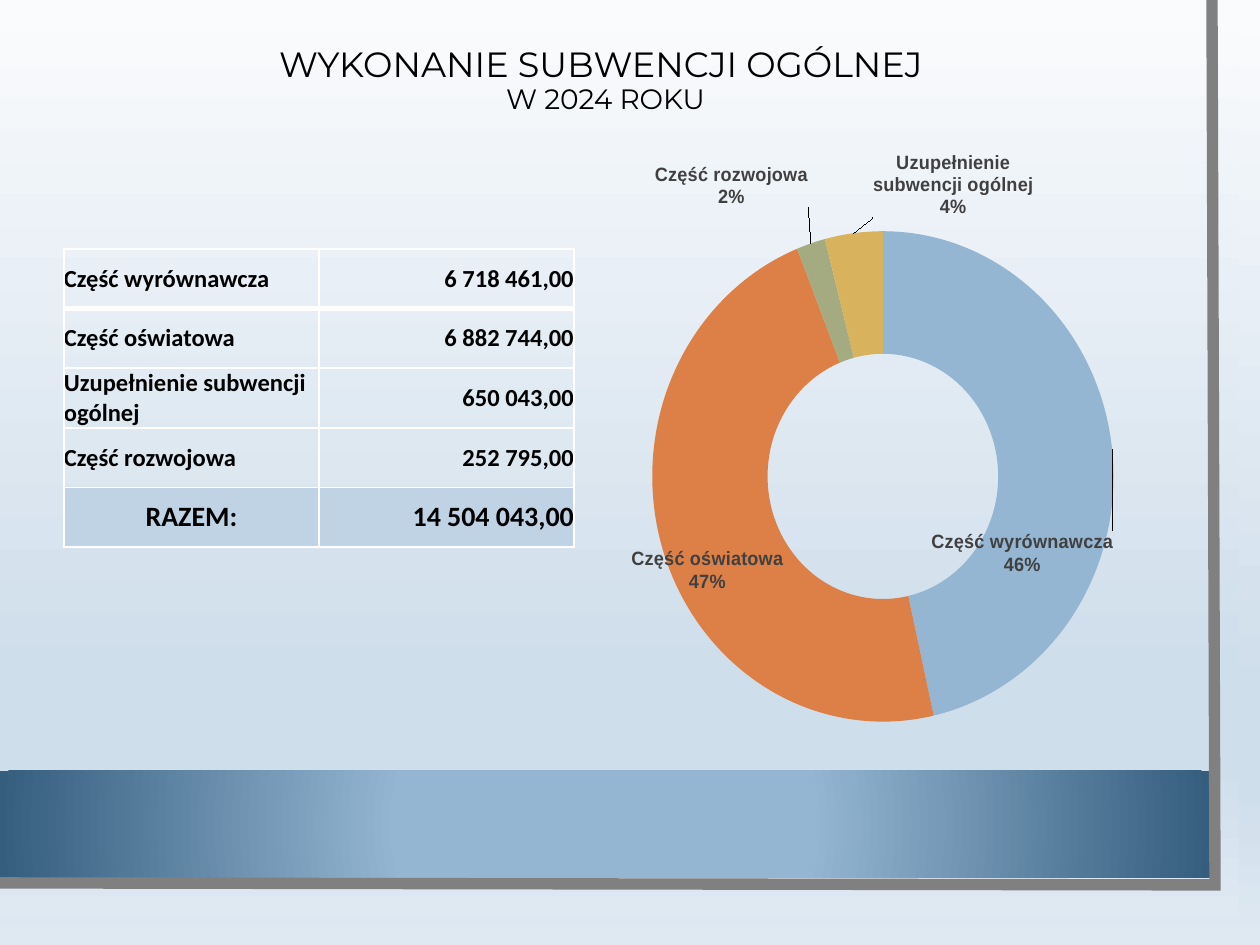
from copy import deepcopy
from dataclasses import dataclass

from lxml import etree
from pptx import Presentation
from pptx.chart.data import CategoryChartData
from pptx.dml.color import RGBColor
from pptx.enum.chart import XL_CHART_TYPE
from pptx.enum.shapes import MSO_SHAPE
from pptx.enum.text import MSO_ANCHOR, PP_ALIGN
from pptx.oxml import parse_xml
from pptx.oxml.ns import nsdecls, qn
from pptx.util import Emu, Pt

PX = 914400 / 126
SKY = ((0, "FAFBFD"), (74, "CFDEEB"), (83, "CFDEEB"), (100, "DFE9F2"))
BAND = ((34, "94B6D2"), (100, "355D7E"))
DOWN = '<a:lin ang="5400000" scaled="0"/>'
FROM_CENTRE = ('<a:path path="circle"><a:fillToRect l="50000" t="50000" '
               'r="50000" b="50000"/></a:path>')


@dataclass
class Entry:
    label: str
    amount: str
    total: bool = False


@dataclass
class Slice:
    label: str
    share: int
    colour: str
    dx: float  # label shift as a fraction of the chart
    dy: float


ENTRIES = [
    Entry("Część wyrównawcza", "6 718 461,00"),
    Entry("Część oświatowa", "6 882 744,00"),
    Entry("Uzupełnienie subwencji ogólnej", "650 043,00"),
    Entry("Część rozwojowa", "252 795,00"),
    Entry("RAZEM:", "14 504 043,00", total=True),
]
SLICES = [
    Slice("Część wyrównawcza", 46, "94B6D2", -0.06, 0.15),
    Slice("Część oświatowa", 47, "DD8047", -0.02, 0.06),
    Slice("Część rozwojowa", 2, "A5AB81", -0.19, -0.18),
    Slice("Uzupełnienie subwencji ogólnej", 4, "D8B25C", 0.18, -0.17),
]


def px(*lengths: int) -> list[Emu]:
    return [Emu(round(length * PX)) for length in lengths]


def colour(value: str) -> RGBColor:
    return RGBColor.from_string(value)


def set_font(font, hex_colour: str, **values) -> None:
    for name, value in values.items():
        setattr(font, name, value)
    font.color.rgb = colour(hex_colour)


def set_gradient(owner, fill, stops, direction: str) -> None:
    """Fill a shape or a slide background with a gradient."""
    fill.gradient()
    gradient = owner.element.find(".//" + qn("a:gradFill"))
    marks = "".join(f'<a:gs pos="{pos * 1000}"><a:srgbClr val="{value}"/></a:gs>'
                    for pos, value in stops)
    gradient.getparent().replace(gradient, parse_xml(
        f'<a:gradFill {nsdecls("a")} rotWithShape="1"><a:gsLst>{marks}</a:gsLst>'
        f'{direction}</a:gradFill>'))


def add_panel(slide, box, stops, direction: str) -> None:
    panel = slide.shapes.add_shape(MSO_SHAPE.RECTANGLE, *px(*box))
    panel.shadow.inherit = False
    panel.line.fill.background()
    set_gradient(panel, panel.fill, stops, direction)


def add_frame(slide) -> None:
    builder = slide.shapes.build_freeform(1212, 0, scale=PX)
    builder.add_line_segments([(1215, 885), (-3, 883)], close=False)
    frame = builder.convert_to_shape()
    frame.shadow.inherit = False
    frame.fill.background()
    frame.line.color.rgb = colour("808080")
    frame.line.width = Pt(6.5)
    etree.SubElement(frame.line._get_or_add_ln(), qn("a:miter"), lim="800000")


def add_title(slide) -> None:
    title = slide.shapes.title
    title.left, title.top, title.width, title.height = px(68, 37, 1075, 89)
    frame = title.text_frame
    frame.word_wrap = True
    frame.vertical_anchor = MSO_ANCHOR.MIDDLE
    paragraph = frame.paragraphs[0]
    paragraph.alignment = PP_ALIGN.CENTER
    paragraph.line_spacing = 0.9
    heading = paragraph.add_run()
    heading.text = "WYKONANIE SUBWENCJI OGÓLNEJ "
    paragraph.add_line_break()
    year = paragraph.add_run()
    year.text = "W 2024 ROKU"
    for run, size in ((heading, 20), (year, 16)):
        set_font(run.font, "000000", name="Montserrat", size=Pt(size))
    slide.shapes._spTree.append(title.element)  # in front of the panels


def set_borders(cell, widths: dict[str, int]) -> None:
    properties = cell._tc.get_or_add_tcPr()
    for side, width in widths.items():
        properties.append(parse_xml(
            f'<a:ln{side} {nsdecls("a")} w="{Pt(width)}"><a:solidFill>'
            f'<a:srgbClr val="FFFFFF"/></a:solidFill></a:ln{side}>'))


def fill_cell(cell, text: str, align, entry: Entry, widths) -> None:
    cell.margin_left = cell.margin_right = cell.margin_top = cell.margin_bottom = 0
    cell.vertical_anchor = MSO_ANCHOR.MIDDLE
    set_borders(cell, widths)
    if entry.total:
        cell.fill.solid()
        cell.fill.fore_color.rgb = colour("BFD3E4")
    else:
        cell.fill.background()
    paragraph = cell.text_frame.paragraphs[0]
    paragraph.alignment = align
    run = paragraph.add_run()
    run.text = text
    set_font(run.font, "000000", name="Calibri", bold=True,
             size=Pt(16 if entry.total else 14))


def add_amounts(slide) -> None:
    table = slide.shapes.add_table(len(ENTRIES), 2, *px(64, 249, 510, 298)).table
    table.first_row = table.horz_banding = False
    for row, entry in enumerate(ENTRIES):
        widths = {"L": 1, "R": 1, "T": 3 if row == 1 else 1, "B": 3 if row == 0 else 1}
        label_align = PP_ALIGN.CENTER if entry.total else PP_ALIGN.LEFT
        fill_cell(table.cell(row, 0), entry.label, label_align, entry, widths)
        fill_cell(table.cell(row, 1), entry.amount, PP_ALIGN.RIGHT, entry, widths)


def layout_xml(**values) -> str:
    items = "".join(f'<c:{name} val="{value}"/>' for name, value in values.items())
    return f'<c:layout {nsdecls("c")}><c:manualLayout>{items}</c:manualLayout></c:layout>'


def add_shares(slide) -> None:
    data = CategoryChartData()
    data.categories = [part.label for part in SLICES]
    data.add_series("Series 1", [part.share for part in SLICES])
    chart = slide.shapes.add_chart(XL_CHART_TYPE.DOUGHNUT, *px(601, 125, 545, 645), data).chart
    chart.has_legend = chart.has_title = False
    set_font(chart.font, "000000", name="Roboto Condensed", size=Pt(10))

    # Ring area
    area = chart._chartSpace.find(".//" + qn("c:plotArea"))
    for old in area.findall(qn("c:layout")):
        area.remove(old)
    area.insert(0, parse_xml(layout_xml(layoutTarget="inner", xMode="edge", yMode="edge",
                                        x=0.1, y=0.11, w=0.9, h=0.87)))

    # Labels and slice colours
    series = chart.plots[0].series[0]
    labels = series.data_labels
    for name, value in {"show_percentage": True, "show_category_name": True,
                        "show_value": False, "number_format": "0%",
                        "number_format_is_linked": False}.items():
        setattr(labels, name, value)
    set_font(labels.font, "404040", name="Arial", size=Pt(11), bold=True)
    group = series._element.find(qn("c:dLbls"))
    text_style = group.find(qn("c:txPr"))
    for index, part in enumerate(SLICES):
        fill = series.points[index].format.fill
        fill.solid()
        fill.fore_color.rgb = colour(part.colour)
        label = parse_xml(
            f'<c:dLbl {nsdecls("c")}><c:idx val="{index}"/>{layout_xml(x=part.dx, y=part.dy)}'
            '<c:numFmt formatCode="0%" sourceLinked="0"/><c:showLegendKey val="0"/>'
            '<c:showVal val="0"/><c:showCatName val="1"/><c:showSerName val="0"/>'
            '<c:showPercent val="1"/><c:showBubbleSize val="0"/>'
            '<c:separator>\n</c:separator></c:dLbl>')
        label.insert(3, deepcopy(text_style))
        group.insert(index, label)


def main() -> None:
    deck = Presentation()
    deck.slide_width, deck.slide_height = px(1260, 945)
    slide = deck.slides.add_slide(deck.slide_layouts[5])
    set_gradient(slide, slide.background.fill, SKY, DOWN)
    # Backdrop
    add_panel(slide, (0, 0, 1239, 916), SKY, DOWN)
    add_panel(slide, (0, 771, 1210, 107), BAND, FROM_CENTRE)
    add_frame(slide)
    # Content
    add_title(slide)
    add_amounts(slide)
    add_shares(slide)
    deck.save("out.pptx")


if __name__ == "__main__":
    main()
